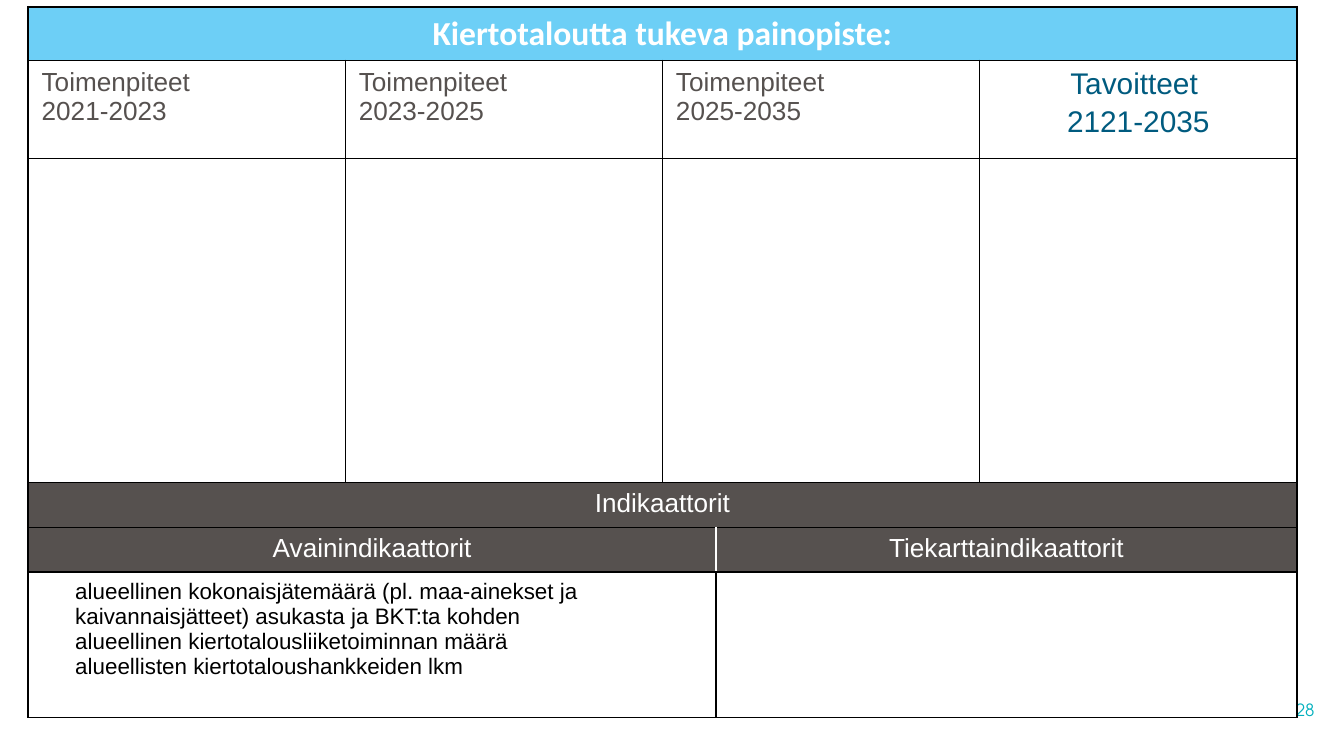
from lxml import etree
from pptx import Presentation
from pptx.dml.color import RGBColor
from pptx.enum.text import MSO_ANCHOR, PP_ALIGN
from pptx.oxml.ns import qn
from pptx.util import Inches, Pt

LEFT, CENTER, RIGHT = PP_ALIGN.LEFT, PP_ALIGN.CENTER, PP_ALIGN.RIGHT
BOTTOM = MSO_ANCHOR.BOTTOM

BLACK, WHITE = "000000", "FFFFFF"
SKY, GREY, NAVY, TEAL = "6DCFF6", "56514F", "005B7F", "00B0BD"


def color(value):
    return RGBColor.from_string(value)


def write(frame, lines, size, ink, align=LEFT, font="Arial", bold=False, gap=0, indent=0):
    for number, line in enumerate(lines):
        para = frame.paragraphs[0] if number == 0 else frame.add_paragraph()
        para.text = line
        para.alignment = align
        if number:
            para.space_before = Pt(gap)
        if indent:
            properties = para._p.get_or_add_pPr()
            properties.set("marL", str(Inches(indent)))
            properties.set("indent", "0")
        para.font.name = font
        para.font.size = Pt(size)
        para.font.bold = bold
        para.font.color.rgb = color(ink)


def style_cell(cell, fill):
    properties = cell._tc.get_or_add_tcPr()
    for side in "LRTB":
        line = etree.SubElement(properties, qn("a:ln" + side), w=str(Pt(1)))
        solid = etree.SubElement(line, qn("a:solidFill"))
        etree.SubElement(solid, qn("a:srgbClr"), val=BLACK)
    cell.fill.solid()
    cell.fill.fore_color.rgb = color(fill)


def add_grid(page, left, top, widths, heights, row_fills):
    """Add a bordered table whose first row is merged into one heading."""
    table = page.shapes.add_table(
        len(heights), len(widths), Inches(left), Inches(top),
        Inches(sum(widths)), Inches(sum(heights))).table
    table.first_row = table.horz_banding = False
    for column, width in zip(table.columns, widths):
        column.width = Inches(width)
    for row, height, fill in zip(table.rows, heights, row_fills):
        row.height = Inches(height)
        for cell in row.cells:
            style_cell(cell, fill)
    table.cell(0, 0).merge(table.cell(0, len(widths) - 1))
    return table


def add_roadmap(page, left, top, width):
    table = add_grid(page, left, top, [width / 4] * 4, [0.4, 0.73, 2.41],
                     [SKY, WHITE, WHITE])
    write(table.cell(0, 0).text_frame, ["Kiertotaloutta tukeva painopiste:"],
          18, WHITE, CENTER, "Calibri", bold=True)
    # Three action periods, then the goals
    for column, period in enumerate(("2021-2023", "2023-2025", "2025-2035")):
        write(table.cell(1, column).text_frame, ["Toimenpiteet", period], 14, GREY)
    write(table.cell(1, 3).text_frame, ["Tavoitteet ", "2121-2035"],
          16, NAVY, CENTER, gap=3)


def add_indicators(page, left, top, width):
    key_width = 5.12
    table = add_grid(page, left, top, [key_width, width - key_width],
                     [0.33, 0.33, 1.08], [GREY, GREY, WHITE])
    # Headings, with a white divider between the two columns
    for row, column, heading in ((0, 0, "Indikaattorit"),
                                 (1, 0, "Avainindikaattorit"),
                                 (1, 1, "Tiekarttaindikaattorit")):
        write(table.cell(row, column).text_frame, [heading], 14, WHITE, CENTER)
    for column, side in ((0, "a:lnR"), (1, "a:lnL")):
        line = table.cell(1, column)._tc.tcPr.find(qn(side))
        line.find(".//" + qn("a:srgbClr")).set("val", WHITE)
    # Key indicators
    write(table.cell(2, 0).text_frame, [
        "alueellinen kokonaisjätemäärä (pl. maa-ainekset ja kaivannaisjätteet)"
        " asukasta ja BKT:ta kohden",
        "alueellinen kiertotalousliiketoiminnan määrä",
        "alueellisten kiertotaloushankkeiden lkm",
    ], 12, BLACK, indent=0.25)


def add_page_number(page, left, top, width, height):
    box = page.shapes.add_textbox(Inches(left), Inches(top), Inches(width), Inches(height))
    frame = box.text_frame
    frame.word_wrap = True
    frame.vertical_anchor = BOTTOM
    frame.margin_left = frame.margin_right = frame.margin_top = frame.margin_bottom = 0
    write(frame, ["28"], 9, TEAL, RIGHT, "TeX Gyre Adventor")


def main():
    deck = Presentation()
    # Widescreen, 16:9
    deck.slide_width, deck.slide_height = Inches(10), Inches(10 * 9 / 16)
    page = deck.slides.add_slide(deck.slide_layouts[6])
    add_page_number(page, 9.51, 5.2, 0.27, 0.16)
    add_roadmap(page, 0.21, 0.05, 9.44)
    add_indicators(page, 0.21, 3.59, 9.44)
    deck.save("out.pptx")


if __name__ == "__main__":
    main()
